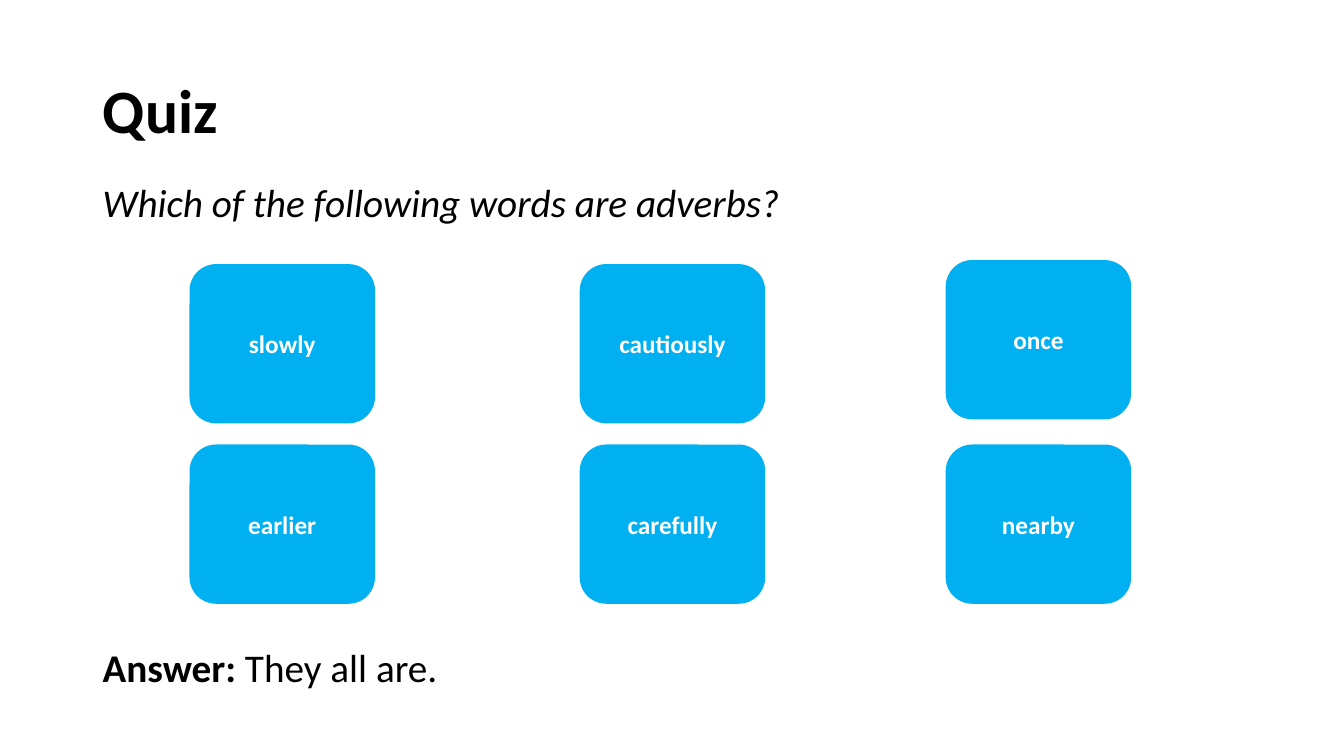
from pptx import Presentation
from pptx.dml.color import RGBColor
from pptx.enum.shapes import MSO_SHAPE as Shape
from pptx.enum.text import MSO_ANCHOR as Anchor, PP_ALIGN as Align
from pptx.util import Inches, Pt


def color(hex_value):
    return RGBColor.from_string(hex_value)


def write(frame, *parts, size=28, fill="000000", align=Align.LEFT,
          anchor=Anchor.TOP, line=1.0, before=0):
    """Write one paragraph; each part is (text, bold, italic)."""
    frame.word_wrap = True
    frame.vertical_anchor = anchor
    paragraph = frame.paragraphs[0]
    paragraph.alignment = align
    paragraph.line_spacing = line
    paragraph.space_before = Pt(before)
    for text, bold, italic in parts:
        run = paragraph.add_run()
        run.text = text
        run.font.name = "Calibri"
        run.font.size = Pt(size)
        run.font.bold = bold
        run.font.italic = italic
        run.font.color.rgb = color(fill)


deck = Presentation()
deck.slide_width, deck.slide_height = Inches(13.33), Inches(7.5)
slide = deck.slides.add_slide(deck.slide_layouts[5])
margin, content_width = Inches(0.92), Inches(11.5)

# Title
heading = slide.shapes.title
heading.left, heading.top = margin, Inches(0.4)
heading.width, heading.height = content_width, Inches(1.45)
write(heading.text_frame, ("Quiz", True, False), size=44,
      anchor=Anchor.MIDDLE, line=0.9)

# Question
question = slide.shapes.add_textbox(margin, Inches(1.77), content_width, Inches(4.76))
write(question.text_frame, ("Which of the following words are adverbs?", False, True),
      line=0.9, before=10)

# Word cards: left edge, then top edge and word of each card in the column
card_columns = [
    (1.88, [(2.62, "slowly"), (4.41, "earlier")]),
    (5.75, [(2.62, "cautiously"), (4.41, "carefully")]),
    (9.38, [(2.58, "once"), (4.41, "nearby")]),
]
for left, cards in card_columns:
    for top, word in cards:
        card = slide.shapes.add_shape(Shape.ROUNDED_RECTANGLE, Inches(left), Inches(top),
                                      Inches(1.84), Inches(1.58))
        card.shadow.inherit = False
        card.fill.solid()
        card.fill.fore_color.rgb = color("00B0F0")
        card.line.fill.background()
        write(card.text_frame, (word, True, False), size=18, fill="FFFFFF",
              align=Align.CENTER, anchor=Anchor.MIDDLE)

# Answer
answer = slide.shapes.add_textbox(margin, Inches(6.33), Inches(3.98), Inches(0.57))
write(answer.text_frame, ("Answer: ", True, False), ("They all are.", False, False))

deck.save("out.pptx")
